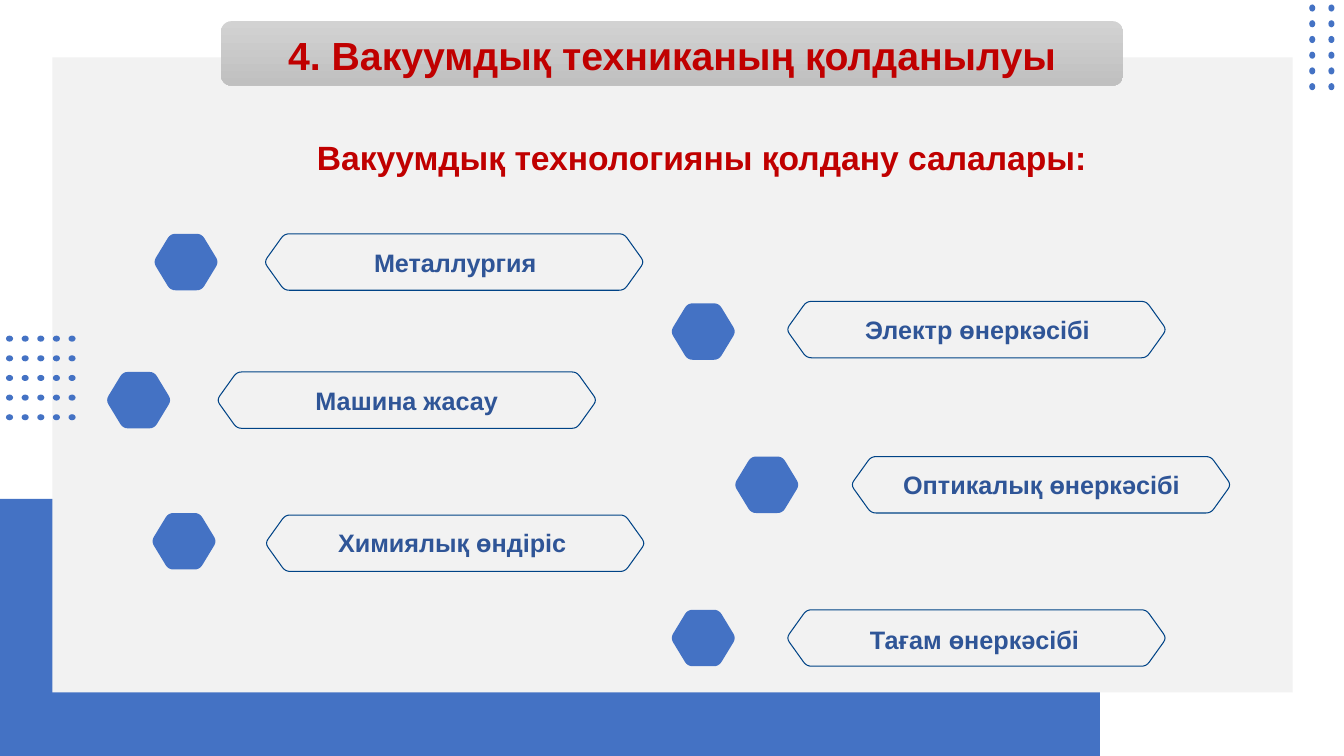
from pptx import Presentation
from pptx import util as u
from pptx.dml.color import RGBColor
from pptx.enum import shapes, text

BLUE, GREY, RED, NAVY, EDGE = "4472C4", "F2F2F2", "C00000", "2F5597", "004386"
PILL_W, BADGE_W, HEX_H = 3.75, 0.63, 0.56


def rgb(code):
    return RGBColor.from_string(code)


class Deck:
    """Style and current slide, with one method per kind of element."""

    font = "Arial"

    def __init__(self, prs):
        self.slide = prs.slides.add_slide(prs.slide_layouts[1])
        self.shapes = self.slide.shapes

    def paint(self, shape, fill=None, line=None):
        shape.shadow.inherit = False
        if fill:
            shape.fill.solid()
            shape.fill.fore_color.rgb = rgb(fill)
        else:
            shape.fill.background()
        if line:
            shape.line.color.rgb = rgb(line)
            shape.line.width = u.Pt(0.75)
        else:
            shape.line.fill.background()

    def shape(self, kind, box, fill, home=None):
        item = (home or self.shapes).add_shape(kind, *map(u.Inches, box))
        self.paint(item, fill)
        return item

    def dots(self, left, top, cols, rows, dx, dy, turn=0):
        home = self.shapes.add_group_shape().shapes
        for col in range(cols):
            for row in range(rows):
                box = (left + col * dx, top + row * dy, 0.07, 0.06)
                dot = self.shape(shapes.MSO_SHAPE.OVAL, box, BLUE, home)
                dot.rotation = turn

    def banner(self, box, top, base):
        bar = self.shape(shapes.MSO_SHAPE.ROUNDED_RECTANGLE, box, base)
        bar.fill.gradient()
        bar.fill.gradient_angle = 270
        for stop, code in zip(bar.fill.gradient_stops, (top, base)):
            stop.color.rgb = rgb(code)

    def hexagon(self, left, top, width, slant, fill=None, line=None):
        """Six-sided outline with softly rounded corners."""
        right, mid = width + 0.01, HEX_H / 2
        tips = [(-0.01, mid), (slant, 0), (width - slant, 0),
                (right, mid), (width - slant, HEX_H), (slant, HEX_H)]
        dots = []
        for i, tip in enumerate(tips):
            start = self.toward(tip, tips[i - 1])
            end = self.toward(tip, tips[(i + 1) % 6])
            for t in (0, 0.25, 0.5, 0.75, 1):
                x, y = ((1 - t) ** 2 * a + 2 * t * (1 - t) * b + t * t * c
                        for a, b, c in zip(start, tip, end))
                dots.append((u.Inches(left + x), u.Inches(top + y)))
        pen = self.shapes.build_freeform(*dots[0])
        pen.add_line_segments(dots[1:], close=True)
        self.paint(pen.convert_to_shape(), fill, line)

    @staticmethod
    def toward(tip, goal, cut=0.05):
        dx, dy = goal[0] - tip[0], goal[1] - tip[1]
        part = cut / (dx * dx + dy * dy) ** 0.5
        return tip[0] + dx * part, tip[1] + dy * part

    def fill_text(self, frame, words, size, color, indent=0):
        frame.word_wrap = True
        frame.text = words
        para = frame.paragraphs[0]
        para.alignment = text.PP_ALIGN.CENTER
        para.font.name = self.font
        para.font.size = u.Pt(size)
        para.font.bold = True
        para.font.color.rgb = rgb(color)
        props = para._p.get_or_add_pPr()
        props.set("marL", str(u.Inches(indent)))
        props.set("indent", "0")
        return para

    def holder(self, index, box, words, size, color, indent=0):
        """Place a layout placeholder in front of what is drawn so far."""
        item = self.slide.placeholders[index]
        item.left, item.top, item.width, item.height = map(u.Inches, box)
        tree = item.element.getparent()
        tree.remove(item.element)
        tree.append(item.element)
        item.text_frame.auto_size = text.MSO_AUTO_SIZE.NONE
        para = self.fill_text(item.text_frame, words, size, color, indent)
        return item.text_frame, para

    def label(self, left, top, words, indent):
        box = self.shapes.add_textbox(*map(u.Inches, (left, top, PILL_W, 0.4)))
        frame = box.text_frame
        self.fill_text(frame, words, 18, NAVY, indent)
        frame.auto_size = text.MSO_AUTO_SIZE.SHAPE_TO_FIT_TEXT
        frame.vertical_anchor = text.MSO_ANCHOR.MIDDLE


def main():
    prs = Presentation()
    prs.slide_width, prs.slide_height = u.Inches(13.33), u.Inches(7.5)
    deck = Deck(prs)

    # Background panels and dot grids
    rect = shapes.MSO_SHAPE.RECTANGLE
    deck.shape(rect, (0, 4.95, 10.91, 2.55), BLUE)
    deck.shape(rect, (0.52, 0.57, 12.3, 6.3), GREY)
    deck.dots(12.98, 0.05, 2, 6, 0.19, 0.78 / 5, 90)
    deck.dots(0.06, 3.33, 5, 5, 0.62 / 4, 0.78 / 4)

    # Heading and lead line
    _, lead = deck.holder(1, (0.98, 1.31, 11.71, 5.59),
                          "Вакуумдық технологияны қолдану салалары:",
                          24, RED, 0.25)
    props = lead._p.get_or_add_pPr()
    props.insert(0, props.makeelement(
        "{http://schemas.openxmlformats.org/drawingml/2006/main}buNone"))
    deck.banner((2.19, 0.21, 8.95, 0.64), "D2D2D2", "C0C0C0")
    frame, head = deck.holder(0, (2.16, 0.03, 9.01, 1.09),
                              "4. Вакуумдық техниканың қолданылуы", 28, RED)
    frame.vertical_anchor = text.MSO_ANCHOR.MIDDLE
    head.line_spacing = 0.9

    # Fields of use: words, badge, pill, label, indent
    fields = [
        ("Металлургия", (1.53, 2.32), (2.63, 2.32), (2.64, 2.4), 0),
        ("Машина жасау", (1.06, 3.69), (2.16, 3.69), (2.16, 3.77), 0),
        ("Химиялық өндіріс", (1.51, 5.09), (2.64, 5.11), (2.61, 5.18), 0),
        ("Электр өнеркәсібі", (6.66, 3.01), (7.81, 2.99), (7.82, 3.07), 0),
        ("Оптикалық өнеркәсібі", (7.29, 4.53), (8.45, 4.53), (8.33, 4.61), 0.25),
        ("Тағам өнеркәсібі", (6.66, 6.05), (7.81, 6.05), (7.79, 6.14), 0),
    ]
    for words, badge, pill, label, indent in fields:
        deck.hexagon(*badge, BADGE_W, 0.16, fill=BLUE)
        deck.hexagon(*pill, PILL_W, 0.19, line=EDGE)
        deck.label(*label, words, indent)

    prs.save("out.pptx")


if __name__ == "__main__":
    main()
